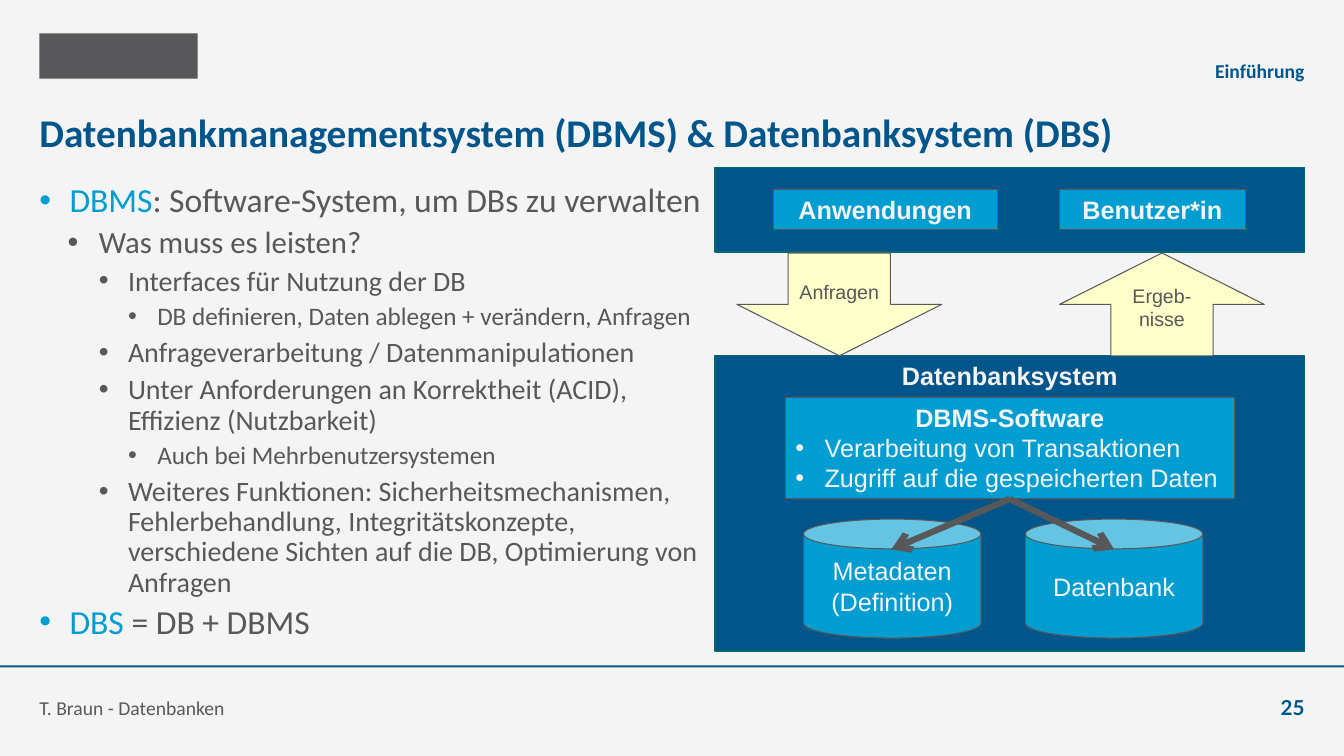
from pptx import Presentation
from pptx.dml.color import RGBColor
from pptx.enum.shapes import MSO_CONNECTOR, MSO_SHAPE
from pptx.enum.text import MSO_ANCHOR, MSO_AUTO_SIZE, PP_ALIGN
from pptx.oxml.ns import qn
from pptx.util import Inches, Pt
from lxml import etree

NAVY = RGBColor(0x00, 0x56, 0x8A)
CYAN = RGBColor(0x00, 0x9D, 0xD1)
TEAL = RGBColor(0x00, 0x69, 0x6F)
GREY = RGBColor(0x58, 0x58, 0x5A)
PALE = RGBColor(0xF4, 0xF4, 0xF4)
YELLOW = RGBColor(0xFF, 0xFF, 0xCC)

RECT, CAN = MSO_SHAPE.RECTANGLE, MSO_SHAPE.CAN
DOWN, UP = MSO_SHAPE.DOWN_ARROW, MSO_SHAPE.UP_ARROW
STRAIGHT = MSO_CONNECTOR.STRAIGHT
TOP, MIDDLE, BOTTOM = MSO_ANCHOR.TOP, MSO_ANCHOR.MIDDLE, MSO_ANCHOR.BOTTOM
LEFT, CENTER, RIGHT = PP_ALIGN.LEFT, PP_ALIGN.CENTER, PP_ALIGN.RIGHT
NO_AUTOFIT = MSO_AUTO_SIZE.NONE

# Per outline level: text indent in inches, hanging indent in inches, size in points
LEVELS = [(0.3, 0.3, 24), (0.59, 0.31, 22), (0.88, 0.29, 20), (1.17, 0.29, 18)]

# Level, highlighted term, remaining text
OUTLINE = [
    (0, "DBMS", ": Software-System, um DBs zu verwalten"),
    (1, "", "Was muss es leisten?"),
    (2, "", "Interfaces für Nutzung der DB"),
    (3, "", "DB definieren, Daten ablegen + verändern, Anfragen"),
    (2, "", "Anfrageverarbeitung / Datenmanipulationen"),
    (2, "", "Unter Anforderungen an Korrektheit (ACID), Effizienz (Nutzbarkeit)"),
    (3, "", "Auch bei Mehrbenutzersystemen"),
    (2, "", "Weiteres Funktionen: Sicherheitsmechanismen, Fehlerbehandlung, "
            "Integritätskonzepte, verschiedene Sichten auf die DB, "
            "Optimierung von Anfragen"),
    (0, "DBS", " = DB + DBMS"),
]


def write(paragraph, text, size=18, color=PALE, font="Arial", bold=False, align=CENTER):
    paragraph.alignment = align
    run = paragraph.add_run()
    run.text = text
    run.font.size, run.font.name, run.font.bold = Pt(size), font, bold
    run.font.color.rgb = color


def add_bullet(paragraph, indent, hanging):
    properties = paragraph._p.get_or_add_pPr()
    properties.set("marL", str(Inches(indent)))
    properties.set("indent", str(-Inches(hanging)))
    etree.SubElement(properties, qn("a:buFont")).set("typeface", "Arial")
    etree.SubElement(properties, qn("a:buChar")).set("char", "•")


def prepare_frame(frame, anchor):
    """Make the frame wrap at the full box width, without insets."""
    frame.word_wrap = True
    frame.auto_size = NO_AUTOFIT
    frame.vertical_anchor = anchor
    frame.margin_left = frame.margin_right = frame.margin_top = frame.margin_bottom = 0
    return frame


def add_frame(slide, box, anchor):
    return prepare_frame(slide.shapes.add_textbox(*map(Inches, box)).text_frame, anchor)


def add_block(slide, kind, box, fill, line=GREY, width=0.75, anchor=MIDDLE):
    block = slide.shapes.add_shape(kind, *map(Inches, box))
    block.shadow.inherit = False
    block.fill.solid()
    block.fill.fore_color.rgb = fill
    if line is None:
        block.line.fill.background()
    else:
        block.line.color.rgb = line
        block.line.width = Pt(width)
    block.text_frame.word_wrap = True
    block.text_frame.vertical_anchor = anchor
    return block


def add_label(block, text, **text_format):
    write(block.text_frame.paragraphs[0], text, **text_format)


def add_access_arrow(slide, source, end_x, end_y):
    """Draw an arrow from the bottom of the source block to a storage lid."""
    arrow = slide.shapes.add_connector(
        STRAIGHT, 0, 0, Inches(end_x), Inches(end_y))
    arrow.begin_connect(source, 2)
    arrow.line.color.rgb = GREY
    arrow.line.width = Pt(4.5)
    arrow.line._get_or_add_ln().append(
        etree.Element(qn("a:tailEnd"), type="arrow"))
    etree.SubElement(arrow._element.spPr, qn("a:effectLst"))


def build_header(slide, left, top, width):
    add_block(slide, RECT, (left, top, 1.57, 0.45), GREY, line=None)
    section = add_frame(slide, (left + width - 9.01, top + 0.1, 9.01, 0.39), BOTTOM)
    write(section.paragraphs[0], "Einführung", size=14, color=NAVY,
          font="Calibri", bold=True, align=RIGHT)
    title = slide.shapes.title
    title.left, title.top = Inches(left), Inches(top + 0.66)
    title.width, title.height = Inches(width), Inches(0.63)
    write(prepare_frame(title.text_frame, MIDDLE).paragraphs[0],
          "Datenbankmanagementsystem (DBMS) & Datenbanksystem (DBS)",
          size=28, color=NAVY, font="Calibri", bold=True, align=LEFT)


def build_outline(slide, box):
    frame = add_frame(slide, box, TOP)
    for index, (level, term, text) in enumerate(OUTLINE):
        paragraph = frame.add_paragraph() if index else frame.paragraphs[0]
        indent, hanging, size = LEVELS[level]
        paragraph.level = level
        paragraph.line_spacing = 0.9
        paragraph.space_before = Pt(5)
        add_bullet(paragraph, indent, hanging)
        for part, color in ((term, CYAN), (text, GREY)):
            if part:
                write(paragraph, part, size=size, color=color, font="Calibri", align=LEFT)


def build_clients(slide, left, top, width):
    add_block(slide, RECT, (left, top, width, 0.84), NAVY, line=TEAL, width=1)
    for text, offset, label_width in (("Anwendungen", 0.58, 2.22),
                                      ("Benutzer*in", 3.42, 1.84)):
        client = add_block(slide, RECT, (left + offset, top + 0.22, label_width, 0.4), CYAN)
        add_label(client, text, bold=True)


def build_exchange(slide, left, top):
    """Place the query and result arrows between clients and database system."""
    size = (2.03, 1.02)
    query = add_block(slide, DOWN, (left + 0.22, top, *size), YELLOW, anchor=TOP)
    query.text_frame.margin_top = Inches(0.27)
    add_label(query, "Anfragen", size=14, color=GREY)
    result = add_block(slide, UP, (left + 3.42, top, *size), YELLOW, anchor=TOP)
    add_label(result, "Ergeb-nisse", size=14, color=GREY)


def build_database_system(slide, left, top, width):
    system = add_block(slide, RECT, (left, top, width, 2.93), NAVY,
                       line=TEAL, width=1, anchor=TOP)
    add_label(system, "Datenbanksystem", bold=True)

    software = add_block(slide, RECT, (left + 0.7, top + 0.41, 4.45, 1.01), CYAN, anchor=TOP)
    add_label(software, "DBMS-Software", bold=True)
    for task in ("Verarbeitung von Transaktionen", "Zugriff auf die gespeicherten Daten"):
        paragraph = software.text_frame.add_paragraph()
        add_bullet(paragraph, 0.29, 0.29)
        write(paragraph, task, align=LEFT)

    stores = (("Metadaten (Definition)", 0.88, 1.75), ("Datenbank", 3.08, 3.96))
    for text, offset, _ in stores:
        add_label(add_block(slide, CAN, (left + offset, top + 1.62, 1.76, 1.18), CYAN), text)
    for _, _, target in stores:
        add_access_arrow(slide, software, left + target, top + 1.92)


def build_architecture(slide, left, top, width):
    build_clients(slide, left, top, width)
    build_database_system(slide, left, top + 1.87, width)
    build_exchange(slide, left, top + 0.85)


def build_footer(slide, left, top, width):
    add_block(slide, RECT, (0, top, 13.33, 0.02), NAVY, line=None)
    author = add_frame(slide, (left, top + 0.15, 9.2, 0.39), BOTTOM)
    write(author.paragraphs[0], "T. Braun - Datenbanken", size=14, color=GREY,
          font="Calibri", align=LEFT)
    page = add_frame(slide, (left + width - 0.79, top + 0.15, 0.79, 0.39), BOTTOM)
    write(page.paragraphs[0], "25", size=14.7, color=NAVY, font="Lato",
          bold=True, align=RIGHT)


def main():
    deck = Presentation()
    deck.slide_width, deck.slide_height = Inches(13.33), Inches(7.5)
    slide = deck.slides.add_slide(deck.slide_layouts[5])
    slide.background.fill.solid()
    slide.background.fill.fore_color.rgb = PALE
    build_header(slide, 0.39, 0.33, 12.55)
    build_outline(slide, (0.39, 1.82, 6.66, 4.64))
    build_architecture(slide, 7.09, 1.66, 5.85)
    build_footer(slide, 0.39, 6.6, 12.55)
    deck.save("out.pptx")


if __name__ == "__main__":
    main()
